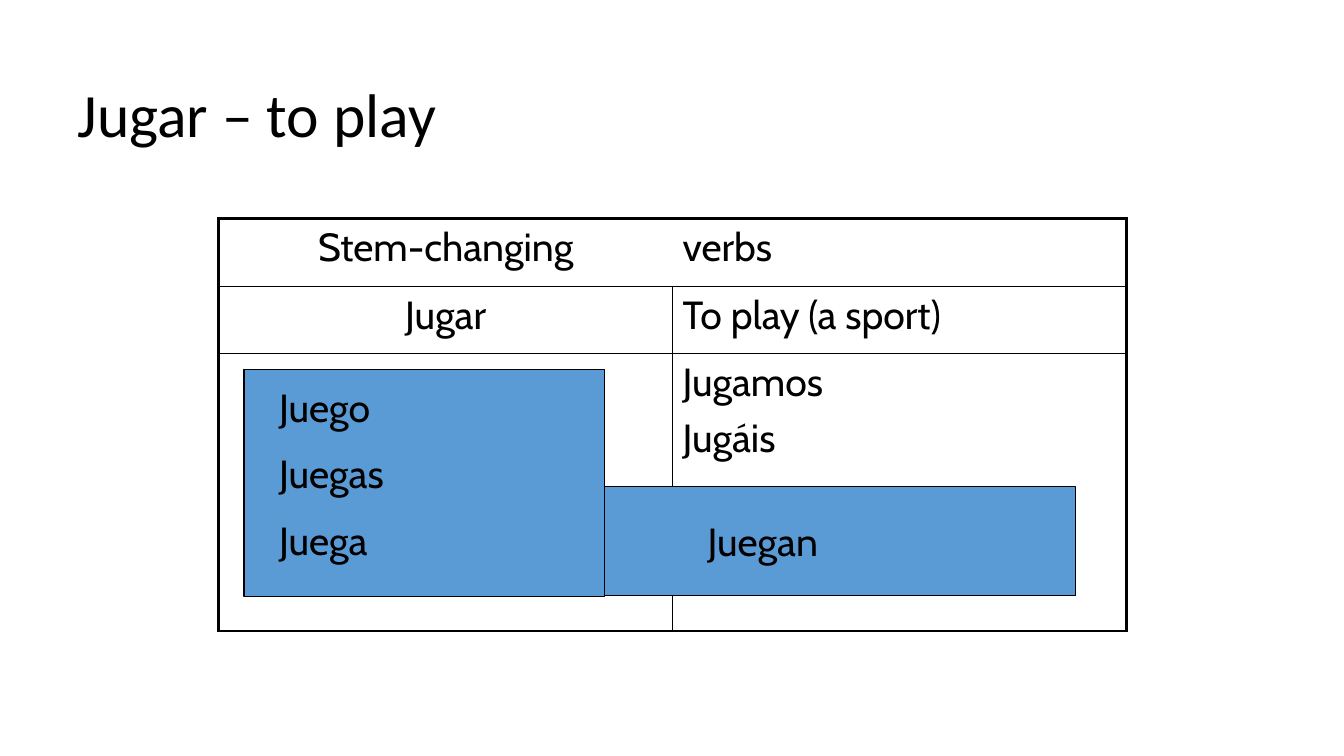
from lxml.etree import SubElement
from pptx import Presentation
from pptx.dml.color import RGBColor
from pptx.enum.shapes import MSO_SHAPE
from pptx.enum.text import MSO_ANCHOR, MSO_AUTO_SIZE, PP_ALIGN
from pptx.oxml.ns import qn
from pptx.util import Inches, Pt

COLORS = {"ink": "000000", "highlight": "5B9BD5", "paper": "FFFFFF"}
TITLE_FONT = "Calibri"
BODY_FONT = "Cabin"


def color(name):
    return RGBColor.from_string(COLORS[name])


def write_text(frame, text, font=BODY_FONT, size=28, align=PP_ALIGN.LEFT,
               before=0, line_spacing=None):
    """Fill a text frame with one paragraph per line of text."""
    frame.text = text
    for paragraph in frame.paragraphs:
        paragraph.alignment = align
        paragraph.space_before = Pt(size * before)
        if line_spacing:
            paragraph.line_spacing = line_spacing
        paragraph.font.size = Pt(size)
        for run in paragraph.runs:
            run.font.name = font
            run.font.size = Pt(size)
            run.font.color.rgb = color("ink")


class VerbSlide:
    def __init__(self, presentation):
        self.slide = presentation.slides.add_slide(presentation.slide_layouts[5])
        self.slide.background.fill.solid()
        self.slide.background.fill.fore_color.rgb = color("paper")

    def title(self, text, left, top, width, height):
        title = self.slide.shapes.title
        title.left, title.top = Inches(left), Inches(top)
        title.width, title.height = Inches(width), Inches(height)
        title.text_frame.vertical_anchor = MSO_ANCHOR.MIDDLE
        write_text(title.text_frame, text, font=TITLE_FONT, size=44, line_spacing=0.9)

    def cell_borders(self, cell, widths):
        """Draw the sides in order left, right, top, bottom; 0 means no line."""
        properties = cell._tc.get_or_add_tcPr()
        for tag, width in zip(("a:lnL", "a:lnR", "a:lnT", "a:lnB"), widths):
            line = SubElement(properties, qn(tag), w=str(Pt(width)))
            if width:
                fill = SubElement(line, qn("a:solidFill"))
                SubElement(fill, qn("a:srgbClr"), val=COLORS["ink"])
            else:
                SubElement(line, qn("a:noFill"))

    def table(self, rows, left, top, column_width, row_heights, outer=2.25, inner=1):
        last_row, last_column = len(rows) - 1, len(rows[0]) - 1
        table = self.slide.shapes.add_table(
            len(rows), len(rows[0]), Inches(left), Inches(top),
            Inches(column_width * len(rows[0])), Inches(sum(row_heights))).table
        table.first_row = table.horz_banding = False
        for column in table.columns:
            column.width = Inches(column_width)
        for r, texts in enumerate(rows):
            table.rows[r].height = Inches(row_heights[r])
            divider = inner if r else 0  # the heading row reads across
            for c, text in enumerate(texts):
                cell = table.cell(r, c)
                write_text(cell.text_frame, text, before=0.2,
                           align=PP_ALIGN.LEFT if c else PP_ALIGN.CENTER)
                self.cell_borders(cell, (
                    divider if c else outer,
                    outer if c == last_column else divider,
                    inner if r else outer,
                    outer if r == last_row else inner))
                cell.fill.background()

    def rectangle(self, left, top, width, height):
        shape = self.slide.shapes.add_shape(
            MSO_SHAPE.RECTANGLE, Inches(left), Inches(top), Inches(width), Inches(height))
        shape.shadow.inherit = False
        shape.fill.solid()
        shape.fill.fore_color.rgb = color("highlight")
        shape.line.color.rgb = color("ink")
        shape.line.width = Pt(0.75)

    def text(self, text, left, top, width, height):
        frame = self.slide.shapes.add_textbox(
            Inches(left), Inches(top), Inches(width), Inches(height)).text_frame
        frame.word_wrap = True
        frame.auto_size = MSO_AUTO_SIZE.SHAPE_TO_FIT_TEXT
        write_text(frame, text, before=0.5)


def main():
    presentation = Presentation()
    presentation.slide_width = Inches(13.33)
    presentation.slide_height = Inches(7.5)
    slide = VerbSlide(presentation)

    # Title
    slide.title("Jugar – to play", 0.67, 0.42, 12, 1.5)

    # Conjugation table
    slide.table([("Stem-changing", "verbs"),
                 ("Jugar", "To play (a sport)"),
                 ("", "Jugamos\nJugáis")],
                2.17, 2.17, column_width=4.5, row_heights=(0.67, 0.67, 2.75))

    # Boot-shaped highlight over the forms whose stem changes
    slide.rectangle(2.42, 3.67, 3.58, 2.25)
    slide.text("Juego\nJuegas\nJuega", 2.67, 3.75, 3.08, 1.97)
    slide.rectangle(6, 4.83, 4.67, 1.08)
    slide.text("Juegan", 6.92, 5.08, 3.5, 0.57)

    presentation.save("out.pptx")


if __name__ == "__main__":
    main()
